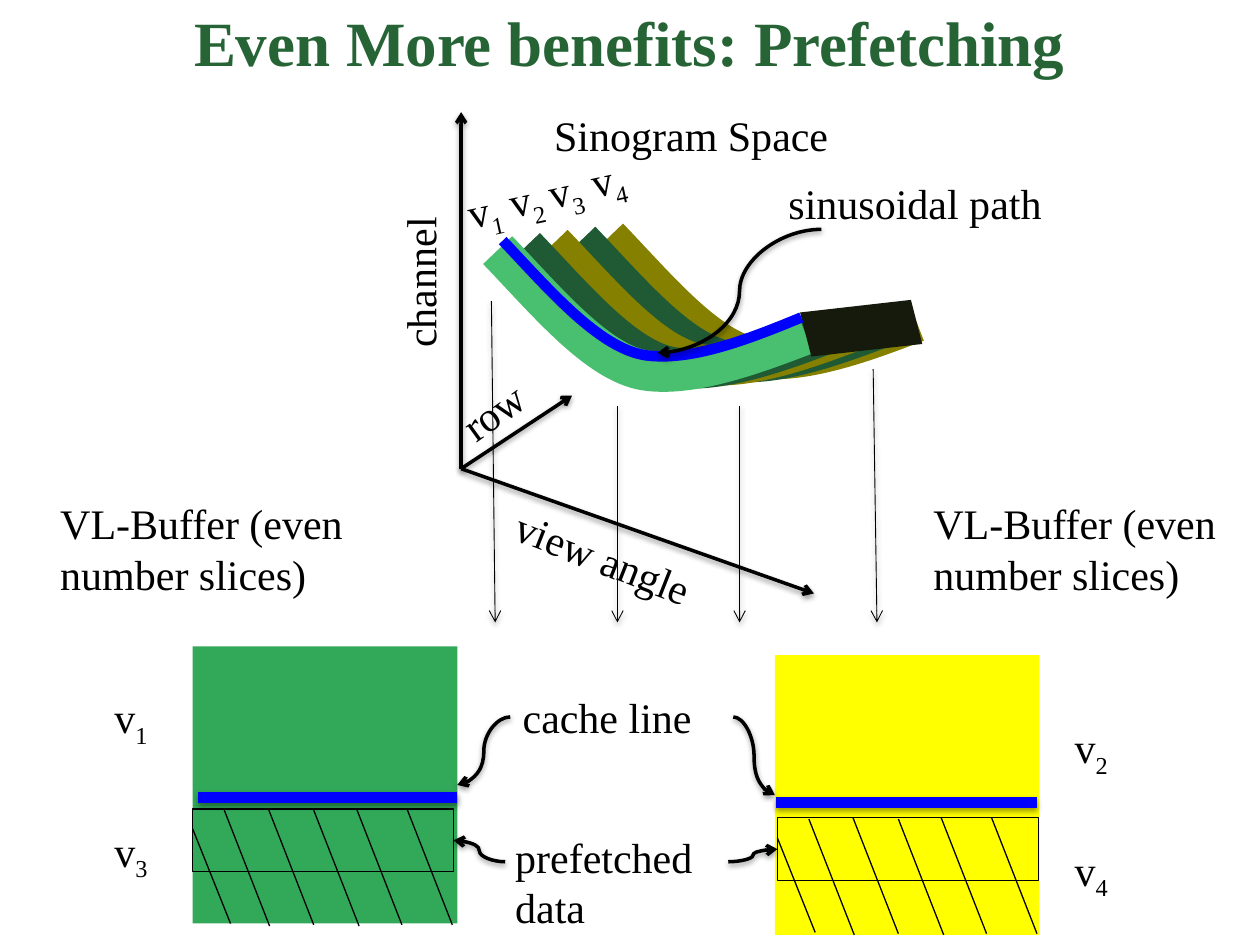
from lxml.etree import SubElement
from pptx import Presentation
from pptx.dml.color import RGBColor
from pptx.enum.shapes import MSO_CONNECTOR as Connector, MSO_SHAPE as Shape
from pptx.enum.text import MSO_ANCHOR as Anchor, PP_ALIGN as Align
from pptx.oxml import parse_xml
from pptx.oxml.ns import qn
from pptx.util import Inches, Pt

THEME = {
    "font": "Times New Roman", "title_size": 36, "body_size": 24,
    "title": "266436", "ink": "000000", "cache": "0000FF",
    "green": "32A859", "yellow": "FFFF00",
    "face": "49BF70", "green_top": "1F5A35", "yellow_top": "858000", "cap": "161A0C",
}
SHADOW = (
    '<a:effectLst xmlns:a="http://schemas.openxmlformats.org/drawingml/2006/main">'
    '<a:outerShdw blurRad="40000" dist="20000" dir="5400000" rotWithShape="0">'
    '<a:srgbClr val="000000"><a:alpha val="38000"/></a:srgbClr></a:outerShdw></a:effectLst>'
)
NO_SHADOW = '<a:effectLst xmlns:a="http://schemas.openxmlformats.org/drawingml/2006/main"/>'

presentation = Presentation()
presentation.slide_width, presentation.slide_height = Inches(10), Inches(7.5)
slide = presentation.slides.add_slide(presentation.slide_layouts[5])
shapes = slide.shapes
CELL = presentation.slide_width // 100  # square grid: 100 columns by 75 rows


def add_label(text, left, top, width, height=5, rotation=0, subscript=""):
    box = shapes.add_textbox(*(round(v * CELL) for v in (left, top, width, height)))
    box.rotation = rotation
    box.text_frame.word_wrap = True
    paragraph = box.text_frame.paragraphs[0]
    for part in filter(None, (text, subscript)):
        run = paragraph.add_run()
        run.text = part
        run.font.color.rgb = RGBColor.from_string(THEME["ink"])
        for name, value in {"name": THEME["font"], "size": Pt(THEME["body_size"])}.items():
            setattr(run.font, name, value)
    if subscript:
        run.font._element.set("baseline", "-25000")
    return box


def add_line(start, end, width, kind=Connector.STRAIGHT, color="ink", arrow=True, shadow=True):
    line = shapes.add_connector(kind, *(round(v * CELL) for v in (*start, *end)))
    line.line.width = Pt(width)
    line.line.color.rgb = RGBColor.from_string(THEME[color])
    if arrow:
        SubElement(line.line._get_or_add_ln(), qn("a:tailEnd"), type="arrow")
    line._element.spPr.append(parse_xml(SHADOW if shadow else NO_SHADOW))
    return line


# Title
title = shapes.title
box_format = {"left": 4.1, "top": 0.1, "width": 91.7, "height": 7.5}
for name, value in box_format.items():
    setattr(title, name, round(value * CELL))
title.text_frame.text = "Even More benefits: Prefetching"
title.text_frame.vertical_anchor = Anchor.MIDDLE
title.text_frame.margin_bottom = Inches(0.11)
paragraph = title.text_frame.paragraphs[0]
paragraph.alignment, paragraph.line_spacing = Align.CENTER, 0.95
paragraph.font.color.rgb = RGBColor.from_string(THEME["title"])
for name, value in {"name": THEME["font"], "size": Pt(THEME["title_size"]), "bold": True}.items():
    setattr(paragraph.font, name, value)

# Sinusoidal ribbon: one thick curve repeated from back to front, its end cap and the cache line
RIBBON = [(39.5, 19.85), (43.3, 23.8), (47.4, 28.8), (51.2, 29.4), (54.8, 29.95), (59.7, 28.2), (63.95, 26.55)]
BLUE = [(39.9, 19.1), (43.6, 23), (47.5, 27.6), (51.2, 28.2), (54.8, 28.7), (59.25, 27), (63.6, 25.2)]
CAP = [(63.5, 24.8), (72.3, 23.8), (73.2, 27.3), (64.4, 28.3), (63.5, 24.8)]
DEPTH = (8.8, -1)
outlines = [
    ([(x + DEPTH[0] * share, y + DEPTH[1] * share) for x, y in RIBBON], color, 23)
    for share, color in ((1, "yellow_top"), (0.75, "green_top"), (0.5, "yellow_top"), (0.25, "green_top"), (0, "face"))
]
outlines += [(CAP, "cap", 0), (BLUE, "cache", 6)]
for points, color, width in outlines:
    start, *others = [(round(x * CELL), round(y * CELL)) for x, y in points]
    builder = shapes.build_freeform(*start)
    builder.add_line_segments(others, close=False)
    piece = builder.convert_to_shape()
    piece.shadow.inherit = False
    if not width:
        piece.fill.solid()
        piece.fill.fore_color.rgb = RGBColor.from_string(THEME[color])
        piece.line.fill.background()
        continue
    piece.fill.background()
    piece.line.width = Pt(width)
    piece.line.color.rgb = RGBColor.from_string(THEME[color])
    segments = list(piece._element.iter(qn("a:lnTo")))
    for first in range(0, len(segments), 3):
        cubic = SubElement(segments[first].getparent(), qn("a:cubicBezTo"))
        for segment in segments[first:first + 3]:
            cubic.append(segment[0])
            segment.getparent().remove(segment)

# Axes and projection arrows
ORIGIN = (36.6, 37.2)
for tip in ((64.6, 47.1), (36.6, 8.9), (45.4, 31.4)):
    add_line(ORIGIN, tip, 2)
for x, top, drift in ((39, 23.9, 0.3), (49, 32.2, 0), (58.7, 32.2, 0), (69.3, 29.3, 0.3)):
    add_line((x, top), (x + drift, 49.4), 0.5)
add_line((65.2, 18.2), (52.2, 28), 2, Connector.CURVE)

# Labels
add_label("row", 35, 28.4, 13.1, rotation=324.2)
channel = add_label("channel", 30.8, 9.6, 6.1, 19)
channel.text_frame._txBody.bodyPr.set("vert", "vert270")
add_label("view angle", 39.1, 44.5, 31.5, rotation=21.6)
add_label("Sinogram Space", 43, 8.2, 38.6)
add_label("sinusoidal path", 61.6, 13.6, 28.7)
cache_label = add_label("cache line", 40.5, 54.4, 17.7)
add_label("prefetched data", 39.9, 65.5, 20.2, 9.1)
for left in (3.8, 73.1):
    add_label("VL-Buffer (even number slices)", left, 39, 26.6, 9.1)
for subscript, left, top, rotation in (
    ("1", 36.1, 14, 347.7), ("2", 39.4, 13.1, 347.7), ("3", 42.5, 12.4, 347.7), ("4", 45.9, 11.5, 347.7),
    ("1", 8.1, 54.4, 0), ("2", 84.3, 56.8, 0), ("3", 8.1, 65, 0), ("4", 84.3, 66.5, 0),
):
    add_label("v", left, top, 6.1, rotation=rotation, subscript=subscript)

# Buffers: block, cache line, hatched prefetch frame and the arrows that point at them
HATCHES = [(0, 1.6, 3, 7.5)] + [(x, y, 3.6, 9.2) for x, y in ((2.5, 0.1), (6, 0), (9.6, 0.1), (13, 0), (17, 0))]
LEFT, RIGHT = 1, 3
for color, block_box, frame_at, cache_x, cache_y, side, prefetch_x in (
    ("green", (15.3, 51.3, 21, 22), (15.3, 64.2), (15.7, 36.3), 63.3, RIGHT, 40.1),
    ("yellow", (61.5, 52, 21, 22.2), (61.7, 64.9), (61.6, 82.3), 63.7, LEFT, 57.8),
):
    block, frame = (
        shapes.add_shape(Shape.RECTANGLE, *(round(v * CELL) for v in box))
        for box in (block_box, (*frame_at, 20.7, 5))
    )
    block.shadow.inherit = frame.shadow.inherit = False
    block.fill.solid()
    block.fill.fore_color.rgb = RGBColor.from_string(THEME[color])
    block.line.fill.background()
    frame.fill.background()
    frame.line.width = Pt(0.75)
    frame.line.color.rgb = RGBColor.from_string(THEME["ink"])
    add_line((cache_x[0], cache_y), (cache_x[1], cache_y), 6, color="cache", arrow=False)
    for x, y, run_x, run_y in HATCHES:
        start = (frame_at[0] + x, frame_at[1] + y)
        add_line(start, (start[0] + run_x, start[1] + run_y), 0.75, arrow=False, shadow=False)
    cache_arrow = add_line((50, 56.9), block_box[:2], 2, Connector.CURVE)
    cache_arrow.begin_connect(cache_label, LEFT if side == RIGHT else RIGHT)
    cache_arrow.end_connect(block, side)
    prefetch_arrow = add_line((prefetch_x, 68.4), frame_at, 2, Connector.CURVE)
    prefetch_arrow.end_connect(frame, side)

presentation.save("out.pptx")
